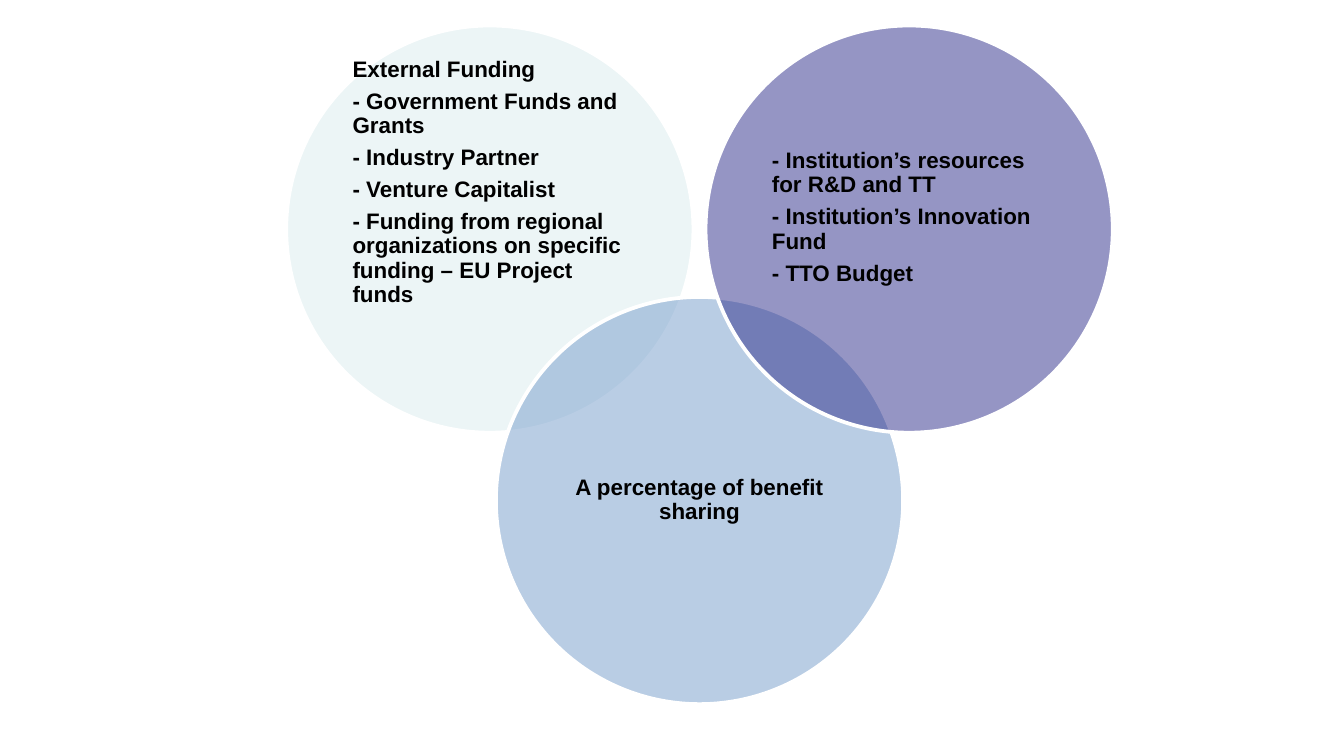
from math import sqrt

from lxml.etree import SubElement
from pptx import Presentation
from pptx.dml.color import RGBColor
from pptx.enum.shapes import MSO_SHAPE as Shape
from pptx.enum.text import MSO_ANCHOR as Anchor, PP_ALIGN as Align
from pptx.oxml.ns import qn
from pptx.util import Inches, Pt

MINT = RGBColor(0xDA, 0xED, 0xEF)
BLUE = RGBColor(0x75, 0x9C, 0xCB)
INDIGO = RGBColor(0x2D, 0x2D, 0x8A)
WHITE = RGBColor(0xFF, 0xFF, 0xFF)
BLACK = RGBColor(0x00, 0x00, 0x00)

deck = Presentation()
deck.slide_width = Inches(10)
deck.slide_height = deck.slide_width * 9 // 16
slide = deck.slides.add_slide(deck.slide_layouts[6])
venn = slide.shapes.add_group_shape().shapes

unit = deck.slide_width / 10
diameter = 3.03 * unit
first_column, column_step = 2.13 * unit, 1.56 * unit
first_row, row_step = 0.19 * unit, 2.02 * unit
label_side = diameter / sqrt(2)
label_offset = (diameter - label_side) / 2
padding = Inches(0.05)

funding_sources = [
    (0, 0, MINT, Align.LEFT, 0.69, [
        "External Funding",
        "- Government Funds and Grants",
        "- Industry Partner",
        "- Venture Capitalist",
        "- Funding from regional organizations on specific funding – EU Project funds",
    ]),
    (1, 1, BLUE, Align.CENTER, 0, ["A percentage of benefit sharing"]),
    (2, 0, INDIGO, Align.LEFT, 0.17, [
        "- Institution’s resources for R&D and TT",
        "- Institution’s Innovation Fund",
        "- TTO Budget",
    ]),
]

for column, row, color, alignment, lift, lines in funding_sources:
    left = first_column + column * column_step
    top = first_row + row * row_step

    circle = venn.add_shape(Shape.OVAL, int(left), int(top), int(diameter), int(diameter))
    circle.shadow.inherit = False
    circle.fill.solid()
    circle.fill.fore_color.rgb = color
    tint = next(circle.element.iter(qn("a:srgbClr")))
    SubElement(tint, qn("a:alpha"), val="50000")
    circle.line.color.rgb = WHITE
    circle.line.width = Pt(2)

    label = venn.add_textbox(int(left + label_offset), int(top + label_offset),
                             int(label_side), int(label_side))
    frame = label.text_frame
    frame.word_wrap = True
    frame.vertical_anchor = Anchor.MIDDLE
    frame.margin_left = frame.margin_right = frame.margin_top = padding
    frame.margin_bottom = padding + Inches(lift)
    frame.text = "\n".join(lines)
    for paragraph in frame.paragraphs:
        paragraph.alignment = alignment
        paragraph.line_spacing = 0.9
        paragraph.space_after = Pt(4.2)
        for run in paragraph.runs:
            run.font.name = "Arial"
            run.font.size = Pt(12)
            run.font.bold = True
            run.font.color.rgb = BLACK

deck.save("out.pptx")
